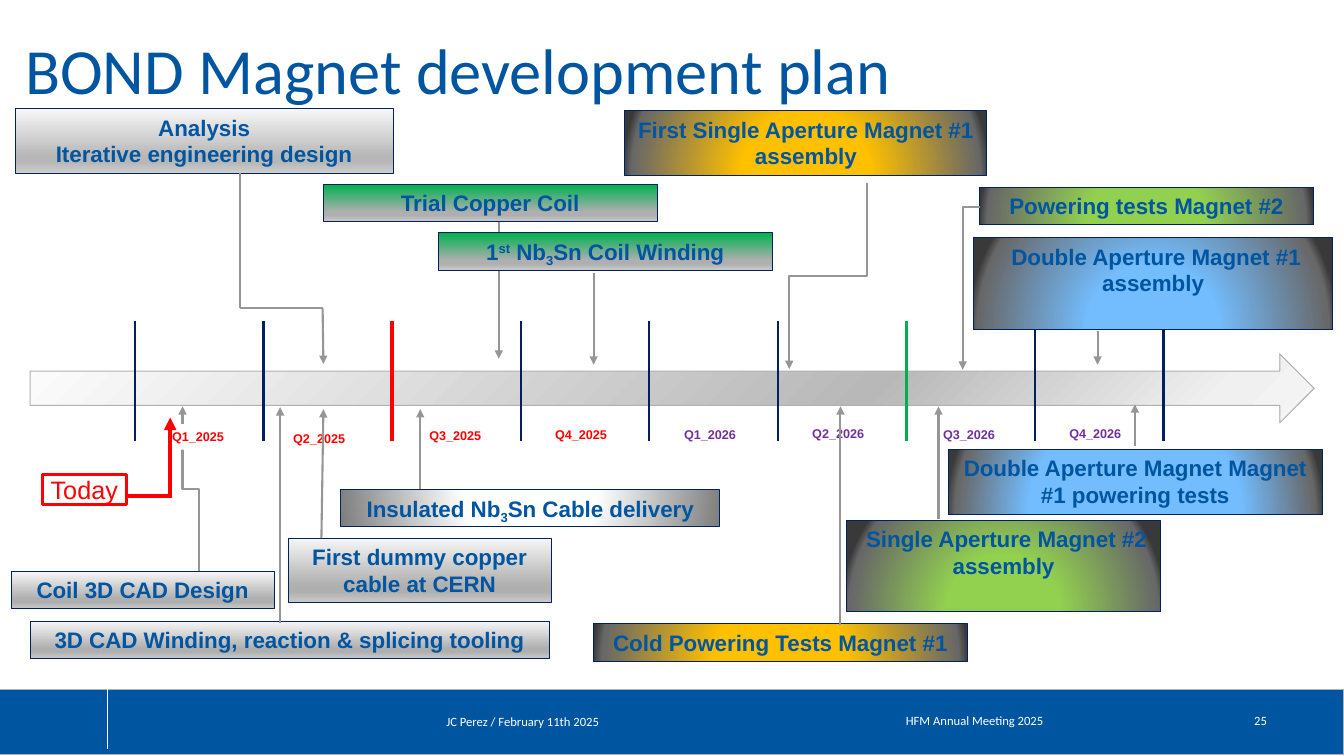
import pptx
import pptx.util
import pptx.dml.color
import pptx.enum.shapes
import pptx.enum.text
import pptx.oxml
import pptx.oxml.ns

Cm, Pt = pptx.util.Cm, pptx.util.Pt
RGB = pptx.dml.color.RGBColor
SHAPE = pptx.enum.shapes.MSO_SHAPE
CONN = pptx.enum.shapes.MSO_CONNECTOR
ALIGN = pptx.enum.text.PP_ALIGN
ANCHOR = pptx.enum.text.MSO_ANCHOR
NS = pptx.oxml.ns.nsdecls("a")

C = {"blue": "0055A0", "navy": "002060", "grey": "969696", "edge": "B1B1B1",
     "red": "FF0000", "green": "00B050", "purple": "7030A0", "white": "FFFFFF"}

# Gradients: stops, then either a linear angle or the focus (l, t, r, b) of a circle
GLOW, DARK = (50, 130, 50, -30), [(95, "676767"), (100, "393939")]
TAIL = [(74, "AFAFAF"), (83, "AFAFAF"), (100, "CACACA")]
GRAD = {
    "silver": ([(0, "F6F6F6")] + TAIL, 90),
    "light": ([(0, "F7F7F7"), (74, "B7B7B7"), (83, "B7B7B7"), (100, "CFCFCF")], 90),
    "coil": ([(0, C["green"])] + TAIL, 90),
    "axis": ([(0, "FDFDFD"), (65, "B8B8B8"), (91, "F0F0F0"), (100, "F5F5F5")], 45),
    "cable": ([(0, C["white"]), (35, C["white"]), (100, "808080")], (50, -80, 50, 180)),
    "amber": ([(35, "FFC000")] + DARK, GLOW),
    "lime": ([(35, "92D050")] + DARK, GLOW),
    "sky": ([(35, "73BDFF")] + DARK, GLOW),
    "sky wide": ([(56, "73BDFF")] + DARK, GLOW),
}


def add_box(at, lines=(), fill=None, line=None, width=0.75, size=16, colour="blue", bold=True,
            font="Arial", align=ALIGN.CENTER, anchor=ANCHOR.TOP, inset=None, kind=SHAPE.RECTANGLE):
    sp = s.shapes.add_shape(kind, *map(Cm, at))
    sp.shadow.inherit = False
    sp.fill.background()
    if fill in GRAD:
        stops, way = GRAD[fill]
        gs = "".join(f'<a:gs pos="{pos * 1000}"><a:srgbClr val="{c}"/></a:gs>' for pos, c in stops)
        if isinstance(way, tuple):
            l, t, r, b = (v * 1000 for v in way)
            way_xml = f'<a:path path="circle"><a:fillToRect l="{l}" t="{t}" r="{r}" b="{b}"/></a:path>'
        else:
            way_xml = f'<a:lin ang="{way * 60000}" scaled="0"/>'
        grad = pptx.oxml.parse_xml(f'<a:gradFill {NS} rotWithShape="1"><a:gsLst>{gs}</a:gsLst>{way_xml}</a:gradFill>')
        spPr = sp._element.spPr
        spPr.replace(spPr.find(pptx.oxml.ns.qn("a:noFill")), grad)
    elif fill:
        sp.fill.solid()
        sp.fill.fore_color.rgb = RGB.from_string(C[fill])
    if line:
        sp.line.color.rgb = RGB.from_string(C[line])
        sp.line.width = Pt(width)
    else:
        sp.line.fill.background()
    tf = sp.text_frame
    tf.word_wrap, tf.vertical_anchor = True, anchor
    if inset is not None:
        tf.margin_left = tf.margin_right = tf.margin_top = tf.margin_bottom = Cm(inset)
    for i, runs in enumerate(lines):
        p = tf.add_paragraph() if i else tf.paragraphs[0]
        p.alignment = align
        for text, baseline in [(runs, 0)] if isinstance(runs, str) else runs:
            r = p.add_run()
            r.text = text
            for key, value in {"name": font, "size": Pt(size), "bold": bold}.items():
                setattr(r.font, key, value)
            r.font.color.rgb = RGB.from_string(C[colour])
            if baseline:
                r.font._element.set("baseline", str(baseline * 1000))


def add_link(x1, y1, x2, y2, colour="grey", width=1.5, arrow=True, rot=None, bend="bentConnector3"):
    kind = CONN.STRAIGHT if rot is None else CONN.ELBOW
    c = s.shapes.add_connector(kind, *map(Cm, (x1, y1, x2, y2)))
    c.line.color.rgb = RGB.from_string(C[colour])
    c.line.width = Pt(width)
    spPr = c._element.spPr
    if arrow:
        c.line._get_or_add_ln().append(pptx.oxml.parse_xml(f'<a:tailEnd {NS} type="triangle"/>'))
    if rot is not None:
        spPr.find(pptx.oxml.ns.qn("a:xfrm")).set("rot", str(rot * 60000))
        spPr.find(pptx.oxml.ns.qn("a:prstGeom")).set("prst", bend)
    spPr.append(pptx.oxml.parse_xml(f"<a:effectLst {NS}/>"))


prs = pptx.Presentation()
prs.slide_width, prs.slide_height = Cm(33.87), Cm(19.05)
s = prs.slides.add_slide(prs.slide_layouts[5])

# Title
title = s.shapes.title
for key, value in {"left": 0.38, "top": 0.43, "width": 23.16, "height": 2.62}.items():
    setattr(title, key, Cm(value))
tf = title.text_frame
tf.text, tf.vertical_anchor = "BOND Magnet development plan", ANCHOR.MIDDLE
p = tf.paragraphs[0]
p.alignment = ALIGN.LEFT
for key, value in {"name": "Calibri", "size": Pt(46), "bold": False}.items():
    setattr(p.font, key, value)
p.font.color.rgb = RGB.from_string(C["blue"])

# Footer
add_box((0, 17.37, 33.87, 1.65), fill="blue", line="edge")
add_link(2.72, 17.22, 2.72, 18.87, "white", 0.75, arrow=False)
for text, left, top, width, align in [
        ("JC Perez / February 11th 2025", 11, 17.68, 7.9, ALIGN.LEFT),
        ("HFM Annual Meeting 2025", 19.2, 17.65, 10.72, ALIGN.CENTER),
        ("25", 30.33, 17.65, 1.85, ALIGN.RIGHT)]:
    add_box((left, top, width, 1.02), [text], size=9, colour="white", bold=False,
            font="Calibri", align=align, anchor=ANCHOR.MIDDLE)

# Design tasks, behind the time axis
add_link(2.72, 12.53, 6.89, 12.12, rot=270)
add_box((0.28, 14.4, 6.63, 0.94), ["Coil 3D CAD Design"], "silver", "navy")
add_box((0.76, 15.65, 13.08, 0.94), ["3D CAD Winding, reaction & splicing tooling"], "silver", "navy")
add_link(7.06, 15.7, 7.06, 10.26)

# Time axis with quarter marks
add_box((0.76, 8.92, 32.36, 1.73), fill="axis", line="edge", kind=SHAPE.RIGHT_ARROW)
for i in range(9):
    x = 3.4 + 3.24 * i
    colour, width = {2: ("red", 2.5), 6: ("green", 2.5)}.get(i, ("navy", 1.5))
    add_link(x, 8.1, x, 11.12, colour, width, arrow=False)
quarters = [(4.09, 10.69), (7.14, 10.74), (10.57, 10.67), (13.74, 10.64),
            (16.99, 10.64), (20.22, 10.62), (23.52, 10.64), (26.7, 10.62)]
for i, (left, top) in enumerate(quarters):
    add_box((left, top, 2.11, 0.64), [f"Q{i % 4 + 1}_{2025 + i // 4}"], None if i else "white",
            size=9, colour="red" if i < 4 else "purple", align=ALIGN.LEFT)

# Today marker
add_link(4.29, 12.55, 4.29, 10.52, "red", 3)
add_link(4.29, 12.5, 3.18, 12.5, "red", 3, arrow=False)
add_box((1.07, 11.96, 2.11, 0.76), ["Today"], line="red", width=2.25, size=18,
        colour="red", bold=False, inset=0)

# Milestones: box, text lines, gradient, arrow from the box to the axis
milestones = [
    ((8.15, 4.65, 8.41, 0.94), ["Trial Copper Coil"], "coil", (12.57, 5.59, 12.57, 9.04)),
    ((11.05, 5.87, 8.41, 0.94), [[("1", 0), ("st", 30), (" Nb", 0), ("3", -25), ("Sn Coil Winding", 0)]],
     "coil", (14.96, 6.88, 14.96, 9.19)),
    ((0.38, 2.74, 9.53, 1.63), ["Analysis", "Iterative engineering design"], "light",
     (8.13, 7.77, 8.15, 9.17)),
    ((8.59, 12.34, 9.55, 0.94), [[("Insulated Nb", 0), ("3", -25), ("Sn Cable delivery", 0)]],
     "cable", (10.59, 12.32, 10.59, 10.31)),
    ((7.26, 13.56, 6.63, 1.63), ["First dummy copper cable at CERN"], "silver", (8.1, 13.56, 8.15, 10.31)),
    ((15.75, 2.79, 9.12, 1.63), ["First Single Aperture Magnet #1 assembly"], "amber",
     (18.52, 5.97, 23.22, 7.93, {"rot": 90})),
    ((14.96, 15.72, 9.42, 0.94), ["Cold Powering Tests Magnet #1"], "amber", (21.18, 15.75, 21.18, 10.24)),
    ((21.34, 13.11, 7.9, 2.31), [" Single Aperture Magnet #2 assembly"], "lime", (23.65, 13.08, 23.65, 10.24)),
    ((24.69, 4.72, 8.41, 0.94), ["Powering tests Magnet #2"], "lime",
     (24.26, 9.32, 24.69, 5.21, {"rot": 180, "bend": "bentConnector2"})),
    ((24.54, 5.99, 9.04, 2.31), [" Double Aperture Magnet #1 assembly"], "sky", (27.66, 8.33, 27.66, 9.19)),
    ((23.9, 11.33, 9.42, 1.63), ["Double Aperture Magnet Magnet #1 powering tests"], "sky wide",
     (28.6, 11.25, 28.6, 10.19)),
]
for at, lines, fill, (x1, y1, x2, y2, *route) in milestones:
    add_box(at, lines, fill, "navy")
    add_link(x1, y1, x2, y2, **(route[0] if route else {}))

# Remaining steps of the analysis arrow
add_link(8.13, 7.77, 6.05, 7.77, arrow=False)
add_link(6.05, 7.77, 6.05, 4.37, arrow=False)

prs.save("out.pptx")
